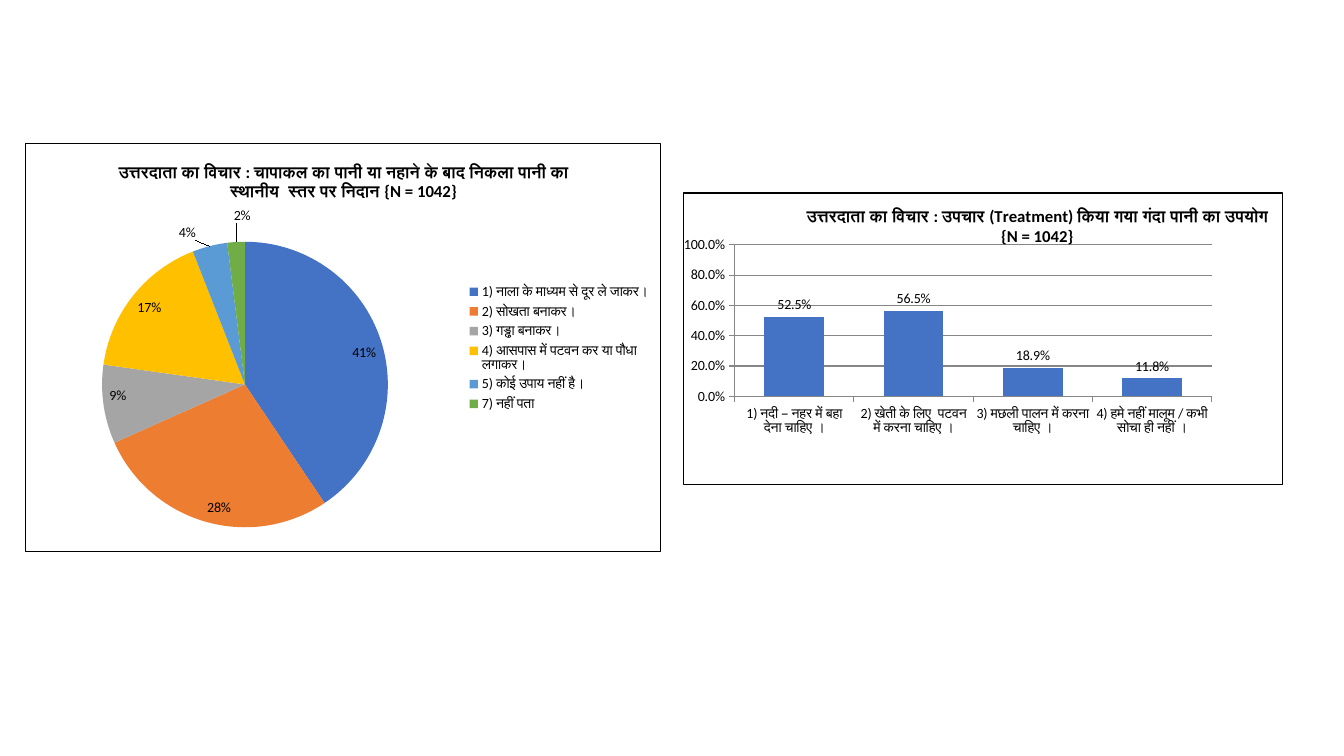
"""Build a slide with a pie chart and a column chart of survey answers on waste water."""
from lxml import etree
from pptx import Presentation
from pptx.chart.data import CategoryChartData
from pptx.dml.color import RGBColor
from pptx.enum.chart import XL_CHART_TYPE, XL_LABEL_POSITION, XL_LEGEND_POSITION, XL_TICK_MARK
from pptx.oxml import parse_xml
from pptx.oxml.ns import nsdecls, qn
from pptx.util import Cm, Pt

PIE = XL_CHART_TYPE.PIE
COLUMN = XL_CHART_TYPE.COLUMN_CLUSTERED
INSIDE_END = XL_LABEL_POSITION.INSIDE_END
OUTSIDE_END = XL_LABEL_POSITION.OUTSIDE_END
LEGEND_RIGHT = XL_LEGEND_POSITION.RIGHT
TICK_OUTSIDE = XL_TICK_MARK.OUTSIDE


class Theme:
    font = "Calibri"
    text_size = Pt(10)
    title_size = Pt(12)
    text = RGBColor(0x00, 0x00, 0x00)
    border = "000000"
    axis = RGBColor(0x86, 0x86, 0x86)
    series = [RGBColor.from_string(code) for code in
              ("4472C4", "ED7D31", "A5A5A5", "FFC000", "5B9BD5", "70AD47")]


def set_layout(element, index, **values):
    """Place a chart part by fractions of the chart area."""
    for old_layout in element.findall(qn("c:layout")):
        element.remove(old_layout)
    layout = etree.Element(qn("c:layout"))
    manual = etree.SubElement(layout, qn("c:manualLayout"))
    for name, value in values.items():
        etree.SubElement(manual, qn(f"c:{name}")).set("val", str(value))
    element.insert(index, layout)


def add_survey_chart(slide, chart_type, box, title, answers, number_format, plot_box):
    """Add a bordered chart with a bold title and a fixed plot area."""
    data = CategoryChartData(number_format=number_format)
    data.categories = list(answers)
    data.add_series("Series 1", list(answers.values()))
    chart = slide.shapes.add_chart(chart_type, *[Cm(length) for length in box], data).chart
    chart.font.name = Theme.font
    chart.font.size = Theme.text_size
    chart.font.color.rgb = Theme.text
    chart.has_title = True
    chart.chart_title.include_in_layout = False
    chart.chart_title.text_frame.text = title
    title_font = chart.chart_title.text_frame.paragraphs[0].runs[0].font
    title_font.name = Theme.font
    title_font.size = Theme.title_size
    title_font.bold = True
    title_font.color.rgb = Theme.text
    chart_space = chart._chartSpace
    chart_space.chart.addnext(parse_xml(
        f'<c:spPr {nsdecls("c", "a")}><a:noFill/><a:ln w="{Pt(0.75)}"><a:solidFill>'
        f'<a:srgbClr val="{Theme.border}"/></a:solidFill></a:ln></c:spPr>'))
    x, y, w, h = plot_box
    set_layout(chart_space.chart.plotArea, 0, layoutTarget="inner",
               xMode="edge", yMode="edge", x=x, y=y, w=w, h=h)
    return chart


presentation = Presentation()
presentation.slide_width = Cm(33.87)
presentation.slide_height = Cm(19.05)
slide = presentation.slides.add_slide(presentation.slide_layouts[6])

disposal_answers = {
    "1) नाला के माध्यम से दूर ले जाकर।": 41,
    "2) सोखता बनाकर।": 28,
    "3) गड्ढा बनाकर।": 9,
    "4) आसपास में पटवन कर या पौधा लगाकर।": 17,
    "5) कोई उपाय नहीं है।": 4,
    "7) नहीं पता": 2,
}
disposal_chart = add_survey_chart(
    slide, PIE, (0.64, 3.61, 16.03, 10.31),
    "उत्तरदाता का विचार : चापाकल का पानी या नहाने के बाद निकला पानी का "
    "स्थानीय  स्तर पर निदान {N = 1042}",
    disposal_answers, "General", (0.12, 0.22, 0.45, 0.74))
disposal_chart.has_legend = True
disposal_chart.legend.position = LEGEND_RIGHT
disposal_chart.legend.include_in_layout = False
disposal_series = disposal_chart.plots[0].series[0]
for index, color in enumerate(Theme.series):
    fill = disposal_series.points[index].format.fill
    fill.solid()
    fill.fore_color.rgb = color

disposal_labels = disposal_series.data_labels
disposal_labels.show_value = False
disposal_labels.show_percentage = True
disposal_labels.number_format = "0%"
disposal_labels.number_format_is_linked = False
disposal_labels.position = INSIDE_END
for index, x, y in ((4, -0.02, 0), (5, 0.01, -0.03)):
    point_label = disposal_series.points[index].data_label
    point_label.font.size = Theme.text_size
    point_label.position = OUTSIDE_END
    label_element = disposal_labels._element.findall(qn("c:dLbl"))[-1]
    label_element.find(qn("c:showVal")).set("val", "0")
    label_element.find(qn("c:showPercent")).set("val", "1")
    set_layout(label_element, 1, x=x, y=y)

reuse_answers = {
    "1) नदी – नहर में बहा देना चाहिए ।": 0.525,
    "2) खेती के लिए  पटवन में करना चाहिए ।": 0.565,
    "3) मछली पालन में करना चाहिए ।": 0.189,
    "4) हमे नहीं मालूम / कभी सोचा ही नहीं ।": 0.118,
}
reuse_chart = add_survey_chart(
    slide, COLUMN, (17.22, 4.85, 15.11, 7.37),
    "उत्तरदाता का विचार : उपचार (Treatment) किया गया गंदा पानी का उपयोग {N = 1042}",
    reuse_answers, "0.0%", (0.085, 0.178, 0.797, 0.52))
set_layout(reuse_chart.chart_title._element, 1, xMode="edge", yMode="edge", x=0.2, y=0.03)
reuse_chart.has_legend = False
reuse_plot = reuse_chart.plots[0]
reuse_plot.gap_width = 100
reuse_plot.vary_by_categories = False
reuse_series = reuse_plot.series[0]
reuse_series.format.fill.solid()
reuse_series.format.fill.fore_color.rgb = Theme.series[0]
reuse_labels = reuse_series.data_labels
reuse_labels.show_value = True
reuse_labels.number_format = "0.0%"
reuse_labels.number_format_is_linked = False
reuse_labels.position = OUTSIDE_END

value_axis = reuse_chart.value_axis
value_axis.minimum_scale = 0
value_axis.maximum_scale = 1
value_axis.major_unit = 0.2
value_axis.has_major_gridlines = True
value_axis.major_gridlines.format.line.color.rgb = Theme.axis
value_axis.tick_labels.number_format = "0.0%"
value_axis.tick_labels.number_format_is_linked = False
for axis in (reuse_chart.category_axis, value_axis):
    axis.major_tick_mark = TICK_OUTSIDE
    axis.format.line.color.rgb = Theme.axis

presentation.save("out.pptx")
